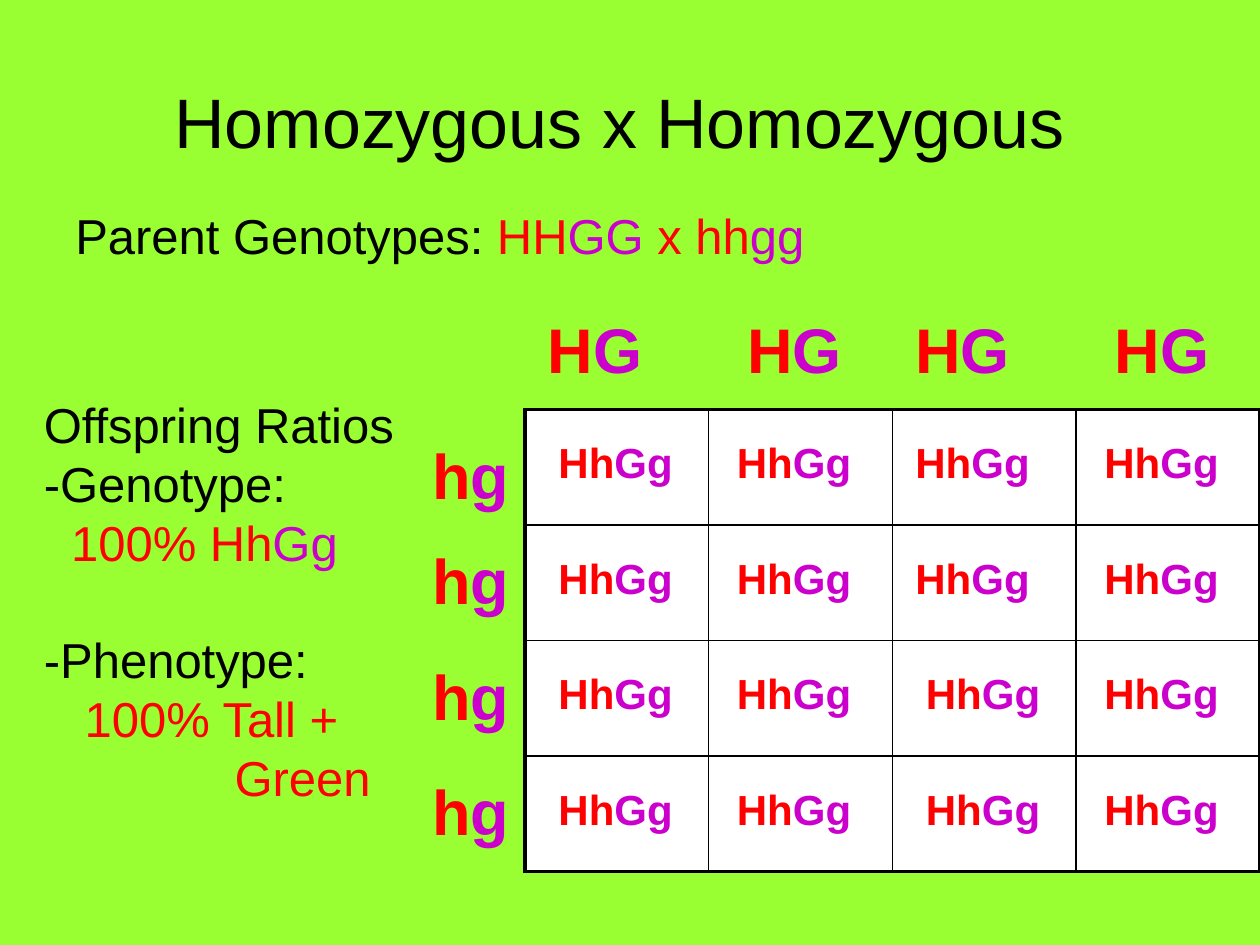
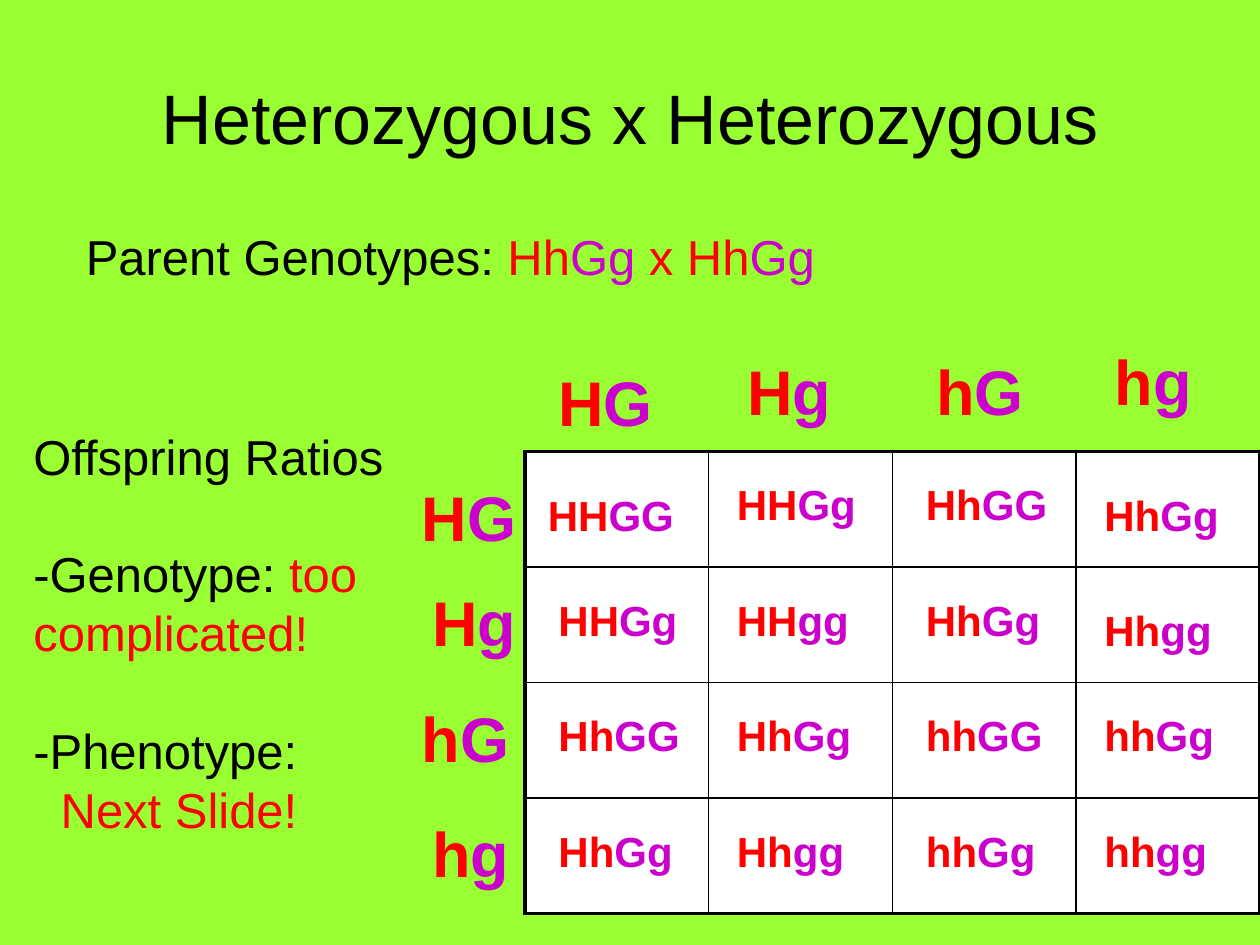
import itertools

import pptx
import pptx.dml.color
import pptx.enum.text
import pptx.oxml
import pptx.oxml.ns
import pptx.util

Pt = pptx.util.Pt
LIME, BLACK, WHITE = "99FF33", "000000", "FFFFFF"
RED, PURPLE = "FF0000", "CC00CC"
FONT = "Arial"
BODY = {"name": FONT, "size": Pt(28), "bold": False}
HEAD = {"name": FONT, "size": Pt(40), "bold": False}
GAMETE = {"name": FONT, "size": Pt(36), "bold": True}
CELL = {"name": FONT, "size": Pt(24), "bold": True}

# Punnett grid: four equal columns and rows
LEFT, WIDE, TALL = 300, 105, 66
GAP = 33.6  # height of one skipped line


def color(code):
    return pptx.dml.color.RGBColor.from_string(code)


def genes(text):
    """Split a genotype into red height and purple colour alleles."""
    return [("".join(part), PURPLE if green else RED)
            for green, part in itertools.groupby(text, lambda c: c in "Gg")]


def cross(row, col):
    """Join two gametes, the dominant allele first in each pair."""
    return "".join("".join(sorted(pair)) for pair in zip(row, col))


def write(par, runs, style):
    for text, code in runs:
        run = par.add_run()
        run.text = text
        run.font.color.rgb = color(code)
        for key, value in style.items():
            setattr(run.font, key, value)


def place(shape, box):
    for key, value in zip(("left", "top", "width", "height"), box):
        setattr(shape, key, Pt(value))


def add_title(slide, text, box):
    title = slide.shapes.title
    place(title, box)
    frame = title.text_frame
    frame.vertical_anchor = pptx.enum.text.MSO_ANCHOR.MIDDLE
    par = frame.paragraphs[0]
    par.alignment = pptx.enum.text.PP_ALIGN.CENTER
    write(par, [(text, BLACK)], HEAD)


def add_text(slide, box, lines, style, wrap=True):
    """Each line is (runs, indent, space before)."""
    frame = slide.shapes.add_textbox(*map(Pt, box)).text_frame
    frame.word_wrap = wrap
    frame.auto_size = pptx.enum.text.MSO_AUTO_SIZE.SHAPE_TO_FIT_TEXT
    for i, (runs, indent, before) in enumerate(lines):
        par = frame.add_paragraph() if i else frame.paragraphs[0]
        if indent:
            par._p.get_or_add_pPr().set("marL", str(Pt(indent)))
        if before:
            par.space_before = Pt(before)
        write(par, runs, style)


def add_genes(slide, box, text, style):
    add_text(slide, box, [(genes(text), 0, 0)], style)


def add_edge(cell, side, width):
    cell._tc.get_or_add_tcPr().append(pptx.oxml.parse_xml(
        f'<a:ln{side} {pptx.oxml.ns.nsdecls("a")} w="{Pt(width)}">'
        f'<a:solidFill><a:srgbClr val="{BLACK}"/></a:solidFill></a:ln{side}>'))


def add_grid(slide, top):
    table = slide.shapes.add_table(
        4, 4, Pt(LEFT), Pt(top), Pt(4 * WIDE), Pt(4 * TALL)).table
    table.first_row = table.horz_banding = False
    for row, col in itertools.product(range(4), repeat=2):
        cell = table.cell(row, col)
        outer = {"L": col == 0, "R": col == 3, "T": row == 0, "B": row == 3}
        for side, thick in outer.items():
            add_edge(cell, side, 2.25 if thick else 1)
        cell.fill.solid()
        cell.fill.fore_color.rgb = color(WHITE)


def add_square(slide, top, heads, sides, cols, moved):
    """Grid with gametes around it; moved holds the shifted cell boxes."""
    add_grid(slide, top)
    for text, x, y in heads:
        add_genes(slide, (x, y, 72, 50.4), text, GAMETE)
    for (text, x, width), y in zip(sides, (12, 72, 138, 204)):
        add_genes(slide, (x, top + y, width, 50.4), text, GAMETE)
    for (r, side), (c, head) in itertools.product(enumerate(sides), enumerate(heads)):
        dx, dy, grow = moved.get((r, c), (0, 0, 0))
        box = (cols[c] + dx, top + 12 + r * TALL + dy, 84 + grow, 36)
        add_genes(slide, box, cross(side[0], head[0]), CELL)


def add_parents(slide, x, y, text):
    runs = [("Parent Genotypes: ", BLACK)] + genes(text)
    add_text(slide, (x, y, 432, 41), [(runs, 0, 0)], BODY, wrap=False)


def pure_cross(slide):
    add_title(slide, "Homozygous x Homozygous", (30, 24, 648, 90))
    add_parents(slide, 36, 114, "HHGG x hhgg")
    add_text(slide, (18, 222, 215, 242.6), [
        ([("Offspring Ratios", BLACK)], 0, 0),
        ([("-Genotype:", BLACK)], 0, 0),
        (genes("100% HhGg"), 15.6, 0),
        ([("-Phenotype:", BLACK)], 0, GAP),
        ([("100% Tall +", RED)], 23.3, 0),
        ([("Green", RED)], 109, 0),
    ], BODY, wrap=False)
    heads = [("HG", x, 174) for x in (306, 420, 516, 630)]
    add_square(slide, 234, heads, [("hg", 240, 66)] * 4, (312, 414, 516, 624),
               {(2, 2): (6, 0, 0), (3, 2): (6, 0, 0)})


def mixed_cross(slide):
    add_title(slide, "Heterozygous x Heterozygous", (36, 21.6, 648, 90))
    add_parents(slide, 42, 126, "HhGg x HhGg")
    add_text(slide, (12, 240, 234, 244.8), [
        ([("Offspring Ratios", BLACK)], 0, 0),
        ([("-Genotype: ", BLACK), ("too complicated!", RED)], 0, GAP),
        ([("-Phenotype:", BLACK)], 0, GAP),
        ([("Next Slide!", RED)], 15.6, 0),
    ], BODY)
    heads = [("HG", 312, 204), ("Hg", 420, 198), ("hG", 528, 198), ("hg", 630, 192)]
    sides = [("HG", 234, 72), ("Hg", 240, 72), ("hG", 234, 72), ("hg", 240, 72)]
    add_square(slide, 258, heads, sides, (312, 414, 522, 624),
               {(0, 0): (-6, 6, 6), (0, 3): (0, 6, 0), (1, 3): (0, 6, 0)})


def main():
    deck = pptx.Presentation()
    deck.slide_width, deck.slide_height = Pt(720), Pt(540)
    # Shared background
    fill = deck.slide_master.background.fill
    fill.solid()
    fill.fore_color.rgb = color(LIME)
    for build in (pure_cross, mixed_cross):
        build(deck.slides.add_slide(deck.slide_layouts[5]))
    deck.save("out.pptx")


if __name__ == "__main__":
    main()
